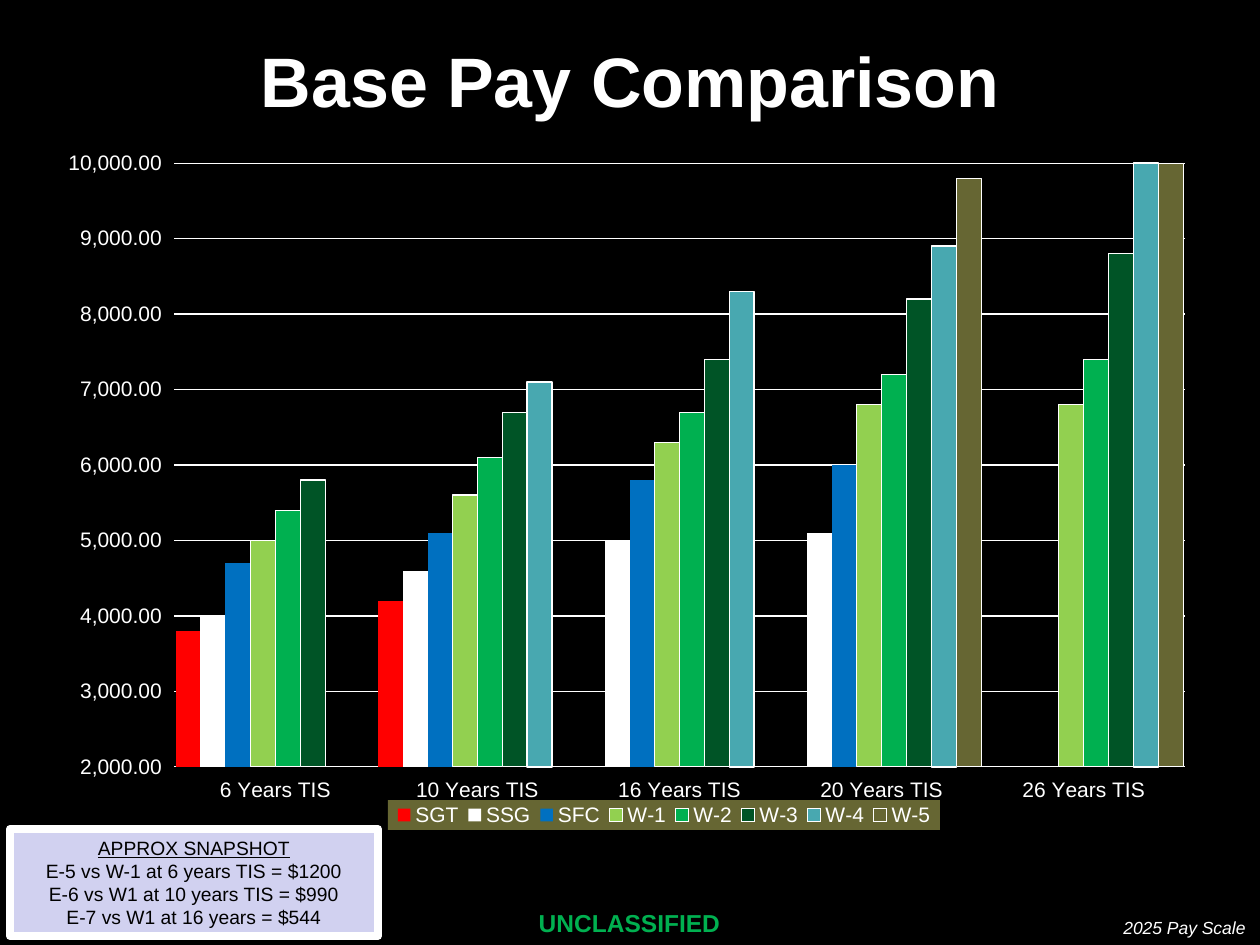
from lxml.etree import fromstring
from pptx import Presentation
from pptx.chart.data import CategoryChartData
from pptx.dml.color import RGBColor
from pptx.enum.chart import XL_CHART_TYPE, XL_LEGEND_POSITION, XL_TICK_LABEL_POSITION, XL_TICK_MARK
from pptx.enum.shapes import MSO_SHAPE
from pptx.enum.text import MSO_ANCHOR, PP_ALIGN
from pptx.oxml.ns import nsdecls, qn
from pptx.util import Pt

PX = 914400 / 126  # EMU per px


def box(*lengths):
    return [round(n * PX) for n in lengths]


def rgb(value):
    return RGBColor.from_string(value)


prs = Presentation()
prs.slide_width, prs.slide_height = box(1260, 945)
s = prs.slides.add_slide(prs.slide_layouts[6])
s.background.fill.solid()
s.background.fill.fore_color.rgb = rgb("000000")

# Pay chart
series = [  # name, fill, outline width, values
    ("SGT", "FF0000", None, (3800, 4200, None, None, None)),
    ("SSG", "FFFFFF", None, (4000, 4600, 5000, 5100, None)),
    ("SFC", "0070C0", None, (4700, 5100, 5800, 6000, None)),
    ("W-1", "92D050", 0.75, (5000, 5600, 6300, 6800, 6800)),
    ("W-2", "00B050", 0.75, (5400, 6100, 6700, 7200, 7400)),
    ("W-3", "005426", 0.75, (5800, 6700, 7400, 8200, 8800)),
    ("W-4", "48A8B0", 1, (None, 7100, 8300, 8900, 10100)),
    ("W-5", "666633", 0.75, (None, None, None, 9800, 11100)),
]
data = CategoryChartData(number_format="#,##0.00")
data.categories = [f"{years} Years TIS" for years in (6, 10, 16, 20, 26)]
for name, _, _, values in series:
    data.add_series(name, values)
chart = s.shapes.add_chart(XL_CHART_TYPE.COLUMN_CLUSTERED, *box(53, 146, 1155, 693), data).chart
chart.has_title = False
chart.font.size = Pt(10)
chart.font.name = "Arial"
chart.font.color.rgb = rgb("FFFFFF")

plot = chart.plots[0]
plot.gap_width = 10
plot.overlap = 0
plot.vary_by_categories = False
for ser, (_, color, width, _) in zip(plot.series, series):
    ser.invert_if_negative = False
    ser.format.fill.solid()
    ser.format.fill.fore_color.rgb = rgb(color)
    if width:
        ser.format.line.color.rgb = rgb("FFFFFF")
        ser.format.line.width = Pt(width)
    else:
        ser.format.line.fill.background()

chart.has_legend = True
legend = chart.legend
legend.position = XL_LEGEND_POSITION.BOTTOM
legend.include_in_layout = False
for part in (chart.category_axis, chart.value_axis):
    part.major_tick_mark = part.minor_tick_mark = XL_TICK_MARK.NONE
    part.tick_label_position = XL_TICK_LABEL_POSITION.LOW
    part.format.line.fill.background()
for font in (chart.category_axis.tick_labels.font, chart.value_axis.tick_labels.font, legend.font):
    font.size = Pt(12)
    font.name = "Arial"
    font.color.rgb = rgb("FFFFFF")

axis = chart.value_axis
axis.minimum_scale, axis.maximum_scale, axis.major_unit = 2000, 10000, 1000
axis.tick_labels.number_format = "#,##0.00"
axis.tick_labels.number_format_is_linked = False
axis.has_major_gridlines = True
axis.major_gridlines.format.line.color.rgb = rgb("FFFFFF")
axis.major_gridlines.format.line.width = Pt(0.75)

# Manual places of the plot and the legend, as fractions of the chart
plot_area = chart._chartSpace.chart.plotArea
legend_xml = legend._element
for parent, index, target, fractions in (
    (plot_area, 0, '<c:layoutTarget val="inner"/>', (0.105, 0.025, 0.875, 0.871)),
    (legend_xml, 1, "", (0.29, 0.944, 0.478, 0.043)),
):
    for old in parent.findall(qn("c:layout")):
        parent.remove(old)
    modes = '<c:xMode val="edge"/><c:yMode val="edge"/>'
    sizes = "".join(f'<c:{tag} val="{n}"/>' for tag, n in zip("xywh", fractions))
    parent.insert(index, fromstring(
        f'<c:layout {nsdecls("c")}><c:manualLayout>{target}{modes}{sizes}</c:manualLayout></c:layout>'))
legend_xml.find(qn("c:overlay")).addnext(fromstring(
    f'<c:spPr {nsdecls("c", "a")}><a:solidFill><a:srgbClr val="666633"/></a:solidFill></c:spPr>'))

# Snapshot panel
panel = s.shapes.add_shape(MSO_SHAPE.RECTANGLE, *box(10, 829, 368, 107))
panel.shadow.inherit = False
panel.fill.solid()
panel.fill.fore_color.rgb = rgb("D1D1F0")
panel.line.color.rgb = rgb("FFFFFF")
panel.line.width = Pt(4.5)

title = s.shapes.add_textbox(*box(0, 0, 1260, 158))
marking = s.shapes.add_textbox(*box(0, 878, 1259, 66))
source = s.shapes.add_textbox(*box(1111, 911, 149, 34))
snapshot = [
    "APPROX SNAPSHOT",
    "E-5 vs W-1 at 6 years TIS = $1200",
    "E-6 vs W1 at 10 years TIS = $990",
    "E-7 vs W1 at 16 years = $544",
]
for sp, lines, size, color, anchor, align, wrap in (
    (title, ["Base Pay Comparison"], 40, "FFFFFF", MSO_ANCHOR.MIDDLE, PP_ALIGN.CENTER, True),
    (marking, ["UNCLASSIFIED"], 14, "00B050", MSO_ANCHOR.BOTTOM, PP_ALIGN.CENTER, True),
    (source, ["2025 Pay Scale"], 10, "FFFFFF", MSO_ANCHOR.TOP, PP_ALIGN.LEFT, False),
    (panel, snapshot, 11, "000000", MSO_ANCHOR.MIDDLE, PP_ALIGN.CENTER, False),
):
    tf = sp.text_frame
    tf.word_wrap = wrap
    tf.vertical_anchor = anchor
    for i, line in enumerate(lines):
        p = tf.add_paragraph() if i else tf.paragraphs[0]
        p.alignment = align
        r = p.add_run()
        r.text = line
        r.font.size = Pt(size)
        r.font.name = "Arial"
        r.font.color.rgb = rgb(color)
        r.font.bold = sp in (title, marking)
        r.font.italic = sp is source
        r.font.underline = sp is panel and i == 0

prs.save("out.pptx")
